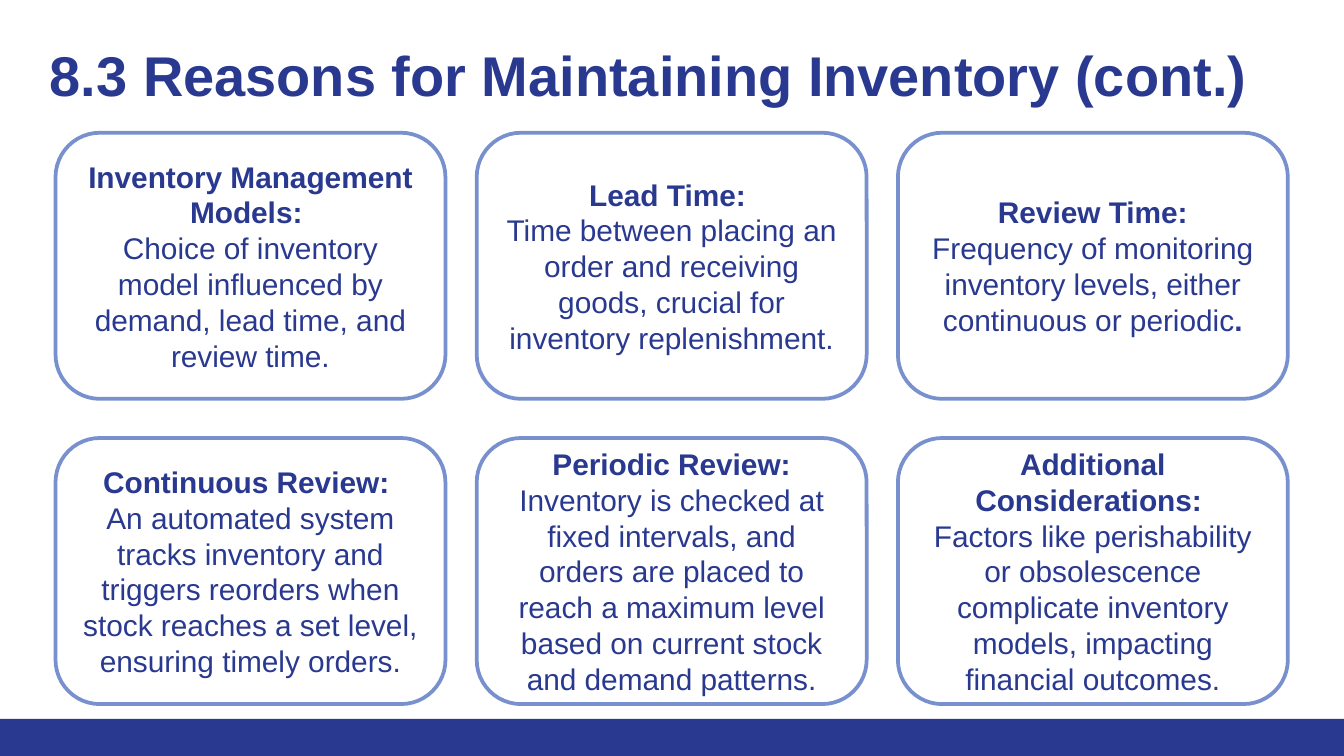
from pptx import Presentation
from pptx import util as u
from pptx.dml.color import RGBColor
from pptx.enum import shapes, text

COLORS = {"navy": "2A3990", "outline": "7890CD", "white": "FFFFFF"}
FONT = "Arial"
SLIDE_WIDTH, SLIDE_HEIGHT = 25.4, 14.29
BAR_TOP = 13.59

# Card grid, in centimetres
COLUMNS = 3
LEFT, TOP = 1.05, 2.51
CARD_WIDTH, CARD_HEIGHT = 7.37, 5.03
COLUMN_STEP, ROW_STEP = 7.96, 5.77

# Each card: heading, body, bold ending of the body.
# A space after a heading counts in its centring.
CARDS = [
    ("Inventory Management Models: ",
     "Choice of inventory model influenced by demand, lead time, and review time.", ""),
    ("Lead Time: ",
     "Time between placing an order and receiving goods, crucial for inventory "
     "replenishment.", ""),
    ("Review Time:",
     "Frequency of monitoring inventory levels, either continuous or periodic", "."),
    ("Continuous Review: ",
     "An automated system tracks inventory and triggers reorders when stock reaches "
     "a set level, ensuring timely orders.", ""),
    ("Periodic Review:",
     "Inventory is checked at fixed intervals, and orders are placed to reach a "
     "maximum level based on current stock and demand patterns.", ""),
    ("Additional Considerations: ",
     "Factors like perishability or obsolescence complicate inventory models, "
     "impacting financial outcomes.", ""),
]


def color(name):
    return RGBColor.from_string(COLORS[name])


def style_font(font, size, bold):
    font.name = FONT
    font.size = u.Pt(size)
    font.bold = bold
    font.color.rgb = color("navy")


def add_box(slide, kind, left, top, width, height, fill):
    shape = slide.shapes.add_shape(
        kind, u.Cm(left), u.Cm(top), u.Cm(width), u.Cm(height))
    shape.shadow.inherit = False
    shape.fill.solid()
    shape.fill.fore_color.rgb = color(fill)
    shape.line.fill.background()
    return shape


def set_title(slide, wording):
    title = slide.shapes.title
    title.left, title.top = u.Cm(0.69), u.Cm(0.51)
    title.width, title.height = u.Cm(24.08), u.Cm(2.26)
    frame = title.text_frame
    frame.margin_left = frame.margin_right = u.Cm(0.25)
    frame.margin_top = frame.margin_bottom = u.Cm(0.25)
    frame.vertical_anchor = text.MSO_ANCHOR.TOP
    frame.auto_size = text.MSO_AUTO_SIZE.NONE
    frame.text = wording
    paragraph = frame.paragraphs[0]
    paragraph.alignment = text.PP_ALIGN.LEFT
    style_font(paragraph.font, 30, True)


def add_card(slide, left, top, heading, body, ending):
    card = add_box(slide, shapes.MSO_SHAPE.ROUNDED_RECTANGLE,
                   left, top, CARD_WIDTH, CARD_HEIGHT, "white")
    card.line.color.rgb = color("outline")
    card.line.width = u.Pt(2)
    frame = card.text_frame
    frame.word_wrap = True
    frame.vertical_anchor = text.MSO_ANCHOR.MIDDLE
    frame.text = f"{heading}\n{body}"
    for paragraph, bold in zip(frame.paragraphs, (True, False)):
        paragraph.alignment = text.PP_ALIGN.CENTER
        paragraph.line_spacing = u.Pt(19.2)
        style_font(paragraph.font, 16, bold)
    if ending:
        run = frame.paragraphs[1].add_run()
        run.text = ending
        run.font.bold = True


def main():
    presentation = Presentation()
    presentation.slide_width = u.Cm(SLIDE_WIDTH)
    presentation.slide_height = u.Cm(SLIDE_HEIGHT)
    slide = presentation.slides.add_slide(presentation.slide_layouts[5])

    # Footer bar and title
    add_box(slide, shapes.MSO_SHAPE.RECTANGLE,
            0, BAR_TOP, SLIDE_WIDTH, SLIDE_HEIGHT - BAR_TOP, "navy")
    set_title(slide, "8.3 Reasons for Maintaining Inventory (cont.)")

    # Cards, row by row
    for index, card in enumerate(CARDS):
        row, column = divmod(index, COLUMNS)
        add_card(slide, LEFT + column * COLUMN_STEP, TOP + row * ROW_STEP, *card)

    presentation.save("out.pptx")


if __name__ == "__main__":
    main()
